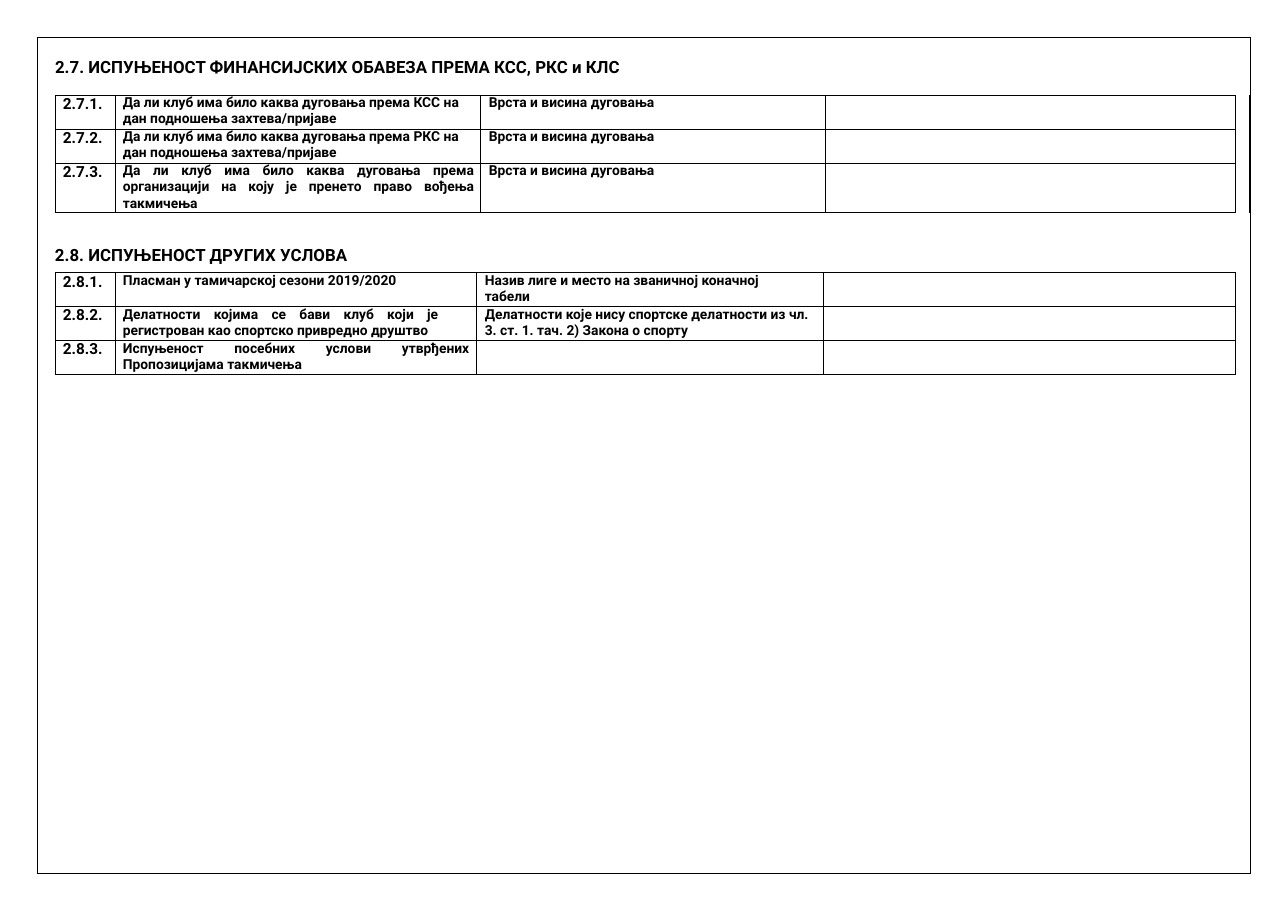
from lxml import etree
from pptx import Presentation, util as u
from pptx.dml.color import RGBColor
from pptx.enum import shapes, text
from pptx.oxml.ns import qn

BLACK = RGBColor(0, 0, 0)
FONT = "Roboto"
LINE = u.Pt(0.58)
LEFT, JUST = text.PP_ALIGN.LEFT, text.PP_ALIGN.JUSTIFY
SCALE = 914400 / 110.2

# Content: a cell is (text, size, alignment, right margin in px)
TITLE = "2.7. ИСПУЊЕНОСТ ФИНАНСИЈСКИХ ОБАВЕЗА ПРЕМА КСС, РКС и КЛС"
SUBTITLE = "2.8. ИСПУЊЕНОСТ ДРУГИХ УСЛОВА"
EMPTY = ("", 9, LEFT, 0)
DEBT = ("Врста и висина дуговања", 9, LEFT, 0)
DEBTS = [
    [EMPTY, ("2.7.1.", 10, LEFT, 0),
     ("Да ли клуб има било каква дуговања према КСС на дан подношења захтева/пријаве", 9, LEFT, 7),
     DEBT, EMPTY, EMPTY],
    [EMPTY, ("2.7.2.", 10, LEFT, 0),
     ("Да ли клуб има било каква дуговања према РКС на дан подношења захтева/пријаве", 9, LEFT, 7),
     DEBT, EMPTY, EMPTY],
    [EMPTY, ("2.7.3.", 10, LEFT, 0),
     ("Да ли клуб има било каква дуговања према организацији на коју је пренето "
      "право вођења такмичења", 9, JUST, 7),
     DEBT, EMPTY, EMPTY],
]
CONDITIONS = [
    [("2.8.1.", 10, LEFT, 0),
     ("Пласман у тамичарској сезони 2019/2020", 9, LEFT, 0),
     ("Назив лиге и место на званичној коначној табели", 9, LEFT, 24), EMPTY],
    [("2.8.2.", 10, LEFT, 0),
     ("Делатности којима се бави клуб који је регистрован као спортско "
      "привредно друштво", 9, JUST, 39),
     ("Делатности које нису спортске делатности из чл. 3. ст. 1. тач. 2) "
      "Закона о спорту", 9, LEFT, 7), EMPTY],
    [("2.8.3.", 10, LEFT, 0),
     ("Испуњеност посебних услови утврђених Пропозицијама такмичења", 9, JUST, 8),
     EMPTY, EMPTY],
]
# Left, top, column widths, row heights, rows, columns with side borders only
TABLES = [
    (37, 95, [18, 60, 366, 345, 410, 14], [34, 34, 50], DEBTS, (0, 5)),
    (55, 273, [60, 362, 347, 412], [34, 34, 34], CONDITIONS, ()),
]
FRAME = (37, 37, 1251, 874)


def px(n):
    return u.Emu(round(n * SCALE))


def write(tf, words, size, align):
    p = tf.paragraphs[0]
    p.alignment = align
    r = p.add_run()
    r.text = words
    for key, value in {"name": FONT, "size": u.Pt(size), "bold": True}.items():
        setattr(r.font, key, value)
    r.font.color.rgb = BLACK


def heading(sp, words, box):
    sp.left, sp.top, sp.width, sp.height = map(px, box)
    tf = sp.text_frame
    settings = dict(margin_left=0, margin_top=0, margin_right=0, margin_bottom=0,
                    word_wrap=False, auto_size=text.MSO_AUTO_SIZE.NONE,
                    vertical_anchor=text.MSO_ANCHOR.TOP)
    for key, value in settings.items():
        setattr(tf, key, value)
    write(tf, words, 11, LEFT)


def borders(cell, sides):
    tcPr = cell._tc.get_or_add_tcPr()
    for i, side in enumerate("LRTB"):
        ln = etree.Element(qn("a:ln" + side), w=str(LINE))
        if side in sides:
            fill = etree.SubElement(ln, qn("a:solidFill"))
            etree.SubElement(fill, qn("a:srgbClr"), val=str(BLACK))
        else:
            etree.SubElement(ln, qn("a:noFill"))
        tcPr.insert(i, ln)


prs = Presentation()
prs.slide_width, prs.slide_height = u.Inches(11.69), u.Inches(8.27)
s = prs.slides.add_slide(prs.slide_layouts[5])

# Headings
heading(s.shapes.title, TITLE, (55, 57, 606, 20))
heading(s.shapes.add_textbox(0, 0, 0, 0), SUBTITLE, (55, 245, 315, 20))

# Page frame
x1, y1, x2, y2 = FRAME
for ends in [(x1, y1, x2, y1), (x1, y1, x1, y2), (x2, y1, x2, y2), (x1, y2, x2, y2)]:
    line = s.shapes.add_connector(shapes.MSO_CONNECTOR.STRAIGHT, *map(px, ends))
    line.line.color.rgb = BLACK
    line.line.width = LINE
    etree.SubElement(line._element.spPr, qn("a:effectLst"))

# Tables
for left, top, widths, heights, rows, open_cols in TABLES:
    tbl = s.shapes.add_table(len(rows), len(widths), px(left), px(top),
                             px(sum(widths)), px(sum(heights))).table
    tbl.first_row = tbl.horz_banding = False
    for col, w in zip(tbl.columns, widths):
        col.width = px(w)
    for i, (row, h) in enumerate(zip(rows, heights)):
        tbl.rows[i].height = px(h)
        for j, (words, size, align, right) in enumerate(row):
            cell = tbl.cell(i, j)
            margins = dict(margin_left=px(8), margin_right=px(right),
                           margin_top=0, margin_bottom=0)
            for key, value in margins.items():
                setattr(cell, key, value)
            cell.fill.background()
            borders(cell, "LR" if j in open_cols else "LRTB")
            if words:
                write(cell.text_frame, words, size, align)

prs.save("out.pptx")
